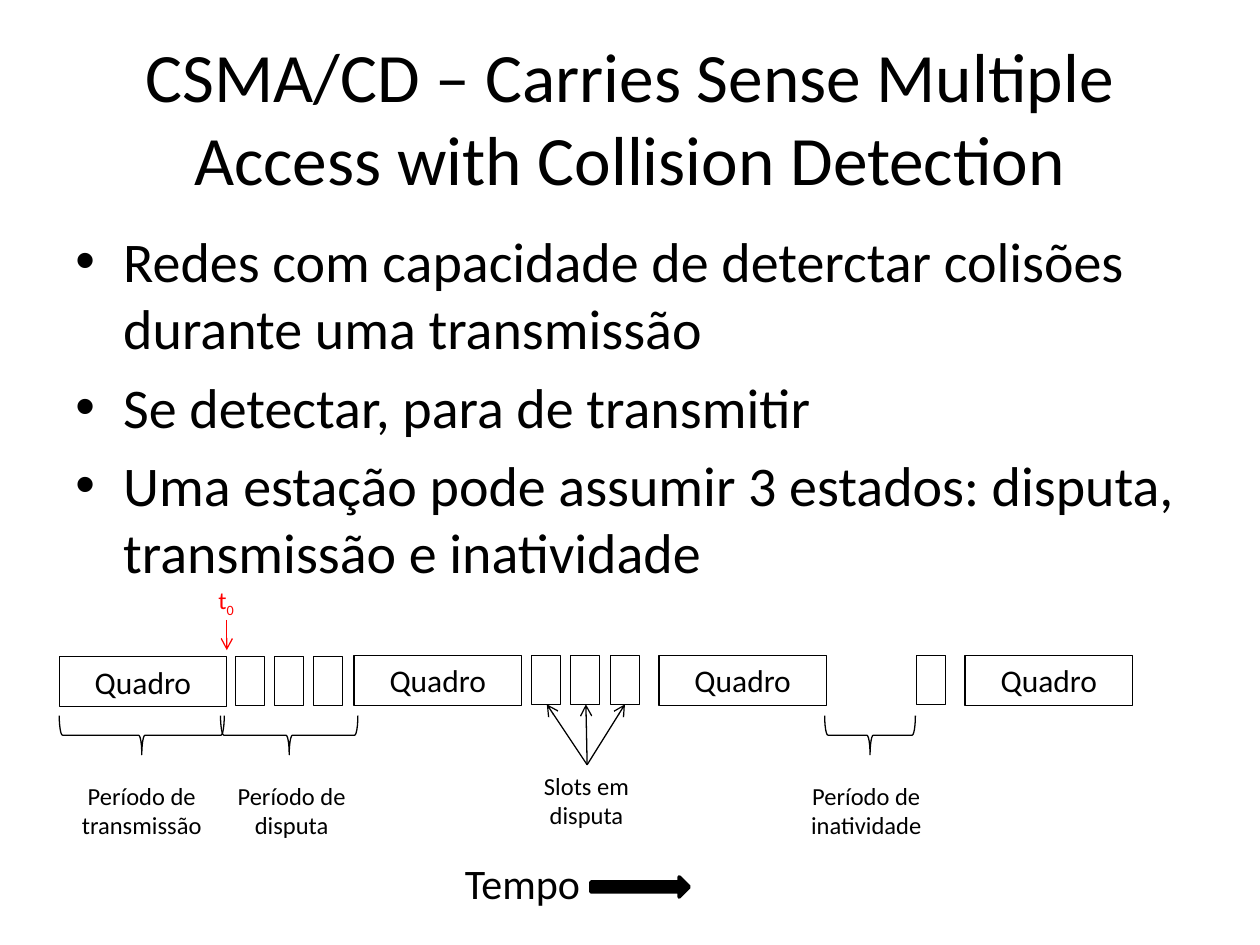
from lxml.etree import SubElement
from pptx import Presentation
from pptx.dml.color import RGBColor
from pptx.enum.shapes import MSO_CONNECTOR, MSO_SHAPE
from pptx.enum.text import MSO_ANCHOR, PP_ALIGN
from pptx.oxml.ns import qn
from pptx.util import Inches, Pt

COLORS = {"ink": "000000", "paper": "FFFFFF", "mark": "FF0000"}

prs = Presentation()
prs.slide_width, prs.slide_height = Inches(10), Inches(7.5)
slide = prs.slides.add_slide(prs.slide_layouts[5])
shapes = slide.shapes


def write(frame, paragraphs, size, color="ink", align=PP_ALIGN.CENTER):
    frame.word_wrap = True
    for i, text in enumerate(paragraphs):
        paragraph = frame.paragraphs[0] if i == 0 else frame.add_paragraph()
        paragraph.alignment = align
        run = paragraph.add_run()
        run.text = text
        style = {"name": "Calibri", "size": Pt(size)}
        for key, value in style.items():
            setattr(run.font, key, value)
        run.font.color.rgb = RGBColor.from_string(COLORS[color])


def outline(kind, left, top, width, height, fill=None, weight=0.75):
    shape = shapes.add_shape(kind, Inches(left), Inches(top), Inches(width), Inches(height))
    shape.shadow.inherit = False
    if fill:
        shape.fill.solid()
        shape.fill.fore_color.rgb = RGBColor.from_string(COLORS[fill])
    else:
        shape.fill.background()
    shape.line.color.rgb = RGBColor.from_string(COLORS["ink"])
    shape.line.width = Pt(weight)
    return shape


# Title
title = shapes.title
title.left, title.top = Inches(0.5), Inches(0.3)
title.width, title.height = Inches(9), Inches(1.25)
title.text_frame.vertical_anchor = MSO_ANCHOR.MIDDLE
write(title.text_frame, ["CSMA/CD – Carries Sense Multiple Access with Collision Detection"], 39.6)

# Bullets
bullets = shapes.add_textbox(Inches(0.5), Inches(1.75), Inches(9), Inches(4.95)).text_frame
write(bullets, [
    "Redes com capacidade de deterctar colisões durante uma transmissão",
    "Se detectar, para de transmitir",
    "Uma estação pode assumir 3 estados: disputa, transmissão e inatividade",
], 32, align=PP_ALIGN.LEFT)
for paragraph in bullets.paragraphs:
    paragraph.space_before = Pt(6.4)
    properties = paragraph._p.get_or_add_pPr()
    properties.set("marL", str(Inches(0.38)))
    properties.set("indent", str(-Inches(0.38)))
    SubElement(properties, qn("a:buFont"), typeface="Arial")
    SubElement(properties, qn("a:buChar"), char="•")

# Timeline: frames and contention slots
for left, top in [(0.47, 5.21), (2.81, 5.2), (5.23, 5.2), (7.66, 5.2)]:
    quadro = outline(MSO_SHAPE.RECTANGLE, left, top, 1.33, 0.4)
    quadro.text_frame.vertical_anchor = MSO_ANCHOR.MIDDLE
    write(quadro.text_frame, ["Quadro"], 18)

for first, top, count in [(1.87, 5.21, 3), (4.22, 5.2, 3), (7.27, 5.2, 1)]:
    for i in range(count):
        outline(MSO_SHAPE.RECTANGLE, first + 0.31 * i, top, 0.23, 0.39, "paper", 0.25)

# Braces under the periods; each is drawn upright and turned to point down
BRACE_DEPTH, BRACE_MIDDLE = 0.31, 5.835
for center, span in [(1.125, 1.31), (2.295, 1.09), (6.905, 0.72)]:
    brace = outline(MSO_SHAPE.RIGHT_BRACE, center - BRACE_DEPTH / 2,
                    BRACE_MIDDLE - span / 2, BRACE_DEPTH, span)
    brace.rotation = 90

# Captions
for caption, left, top, width in [
    ("Período de transmissão", 0.42, 6.15, 1.41),
    ("Período de disputa", 1.61, 6.15, 1.41),
    ("Slots em disputa", 3.95, 6.07, 1.41),
    ("Período de inatividade", 6.33, 6.15, 1.09),
]:
    box = shapes.add_textbox(Inches(left), Inches(top), Inches(width), Inches(0.57))
    write(box.text_frame, [caption], 14)

# Start instant t0
instant = shapes.add_textbox(Inches(1.56), Inches(4.59), Inches(0.47), Inches(0.34)).text_frame
write(instant, ["t"], 14, "mark")
subscript = instant.paragraphs[0].add_run()
subscript.text = "0"
subscript.font.name, subscript.font.size = "Calibri", Pt(14)
subscript.font.color.rgb = RGBColor.from_string(COLORS["mark"])
subscript.font._element.set("baseline", "-25000")

# Arrows to the slots and to the start instant
for x1, y1, x2, y2, color in [
    (4.66, 6.07, 4.34, 5.59, "ink"),
    (4.66, 6.07, 4.65, 5.59, "ink"),
    (4.66, 6.07, 4.96, 5.59, "ink"),
    (1.8, 4.92, 1.8, 5.16, "mark"),
]:
    arrow = shapes.add_connector(MSO_CONNECTOR.STRAIGHT, Inches(x1), Inches(y1), Inches(x2), Inches(y2))
    arrow.line.color.rgb = RGBColor.from_string(COLORS[color])
    arrow.line.width = Pt(0.75)
    SubElement(arrow.line._get_or_add_ln(), qn("a:tailEnd"), type="arrow")
    SubElement(arrow._element.spPr, qn("a:effectLst"))

# Time axis
tempo = shapes.add_textbox(Inches(3.59), Inches(6.76), Inches(1.25), Inches(0.5))
write(tempo.text_frame, ["Tempo"], 24, align=PP_ALIGN.LEFT)
outline(MSO_SHAPE.RIGHT_ARROW, 4.69, 6.96, 0.78, 0.16, "ink", 2)

prs.save("out.pptx")
